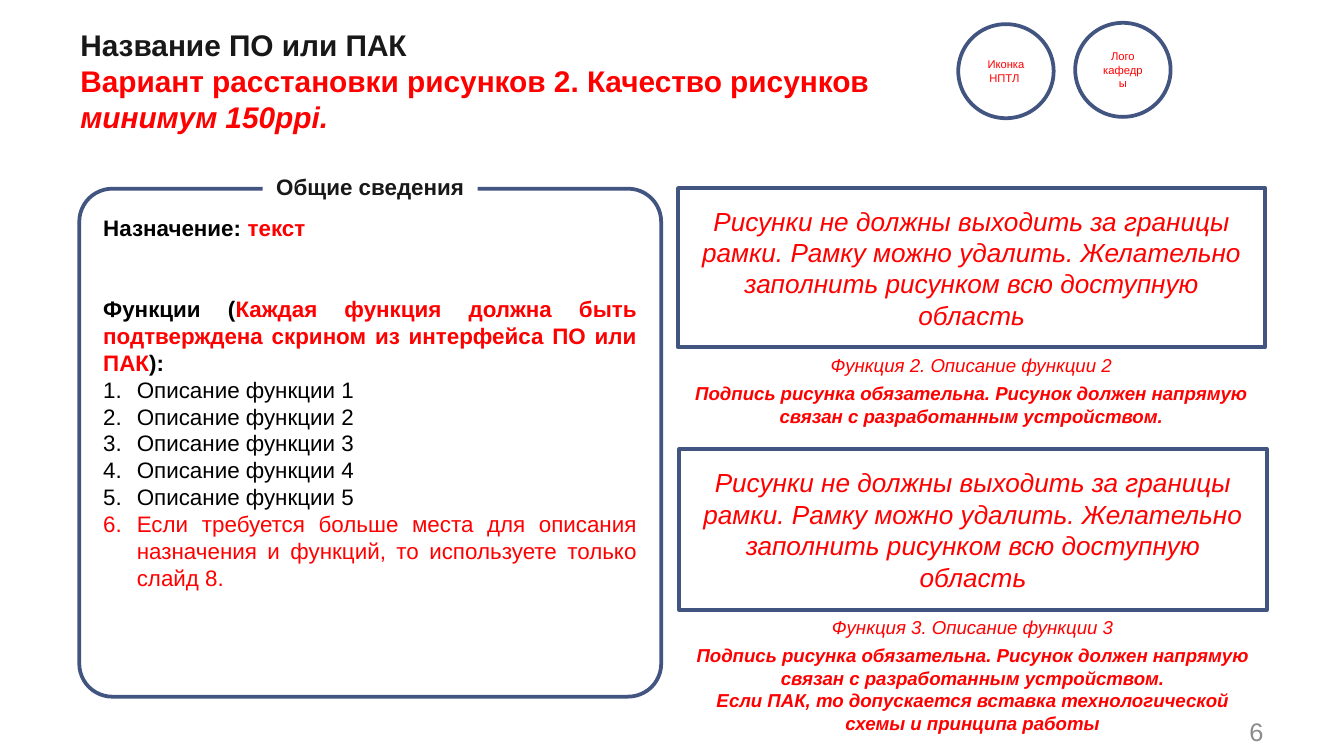
from lxml.etree import SubElement
from pptx import Presentation
from pptx.dml.color import RGBColor
from pptx.enum.shapes import MSO_SHAPE as Kind
from pptx.enum.text import MSO_ANCHOR as Anchor, MSO_AUTO_SIZE as Fit, PP_ALIGN as Align
from pptx.oxml.ns import qn
from pptx.util import Inches, Pt

RED, BLUE, WHITE, DARK, BLACK, GREY = "FF0000", "425480", "FFFFFF", "181818", "000000", "8C8C8C"
COLS, ROWS = 100, 56.25


def tint(code):
    return RGBColor.from_string(code)


class Deck:
    """Holds the style and the current slide, laid out on a grid of columns and rows."""

    def __init__(self):
        self.font = "Arial"
        self.show = Presentation()
        self.show.slide_width = Inches(10)
        self.show.slide_height = Inches(10) * 9 // 16
        self.slide = self.show.slides.add_slide(self.show.slide_layouts[6])

    def place(self, col, row, wide, high):
        x, y = self.show.slide_width / COLS, self.show.slide_height / ROWS
        return round(col * x), round(row * y), round(wide * x), round(high * y)

    def shape(self, kind, area, line=BLUE):
        item = self.slide.shapes.add_shape(kind, *self.place(*area))
        item.shadow.inherit = False
        item.fill.solid()
        item.fill.fore_color.rgb = tint(WHITE)
        if line:
            item.line.color.rgb = tint(line)
            item.line.width = Pt(2)
        else:
            item.line.fill.background()
        return item

    def box(self, area):
        return self.slide.shapes.add_textbox(*self.place(*area))

    def frame(self, item, anchor=Anchor.TOP, grow=False, wrap=True):
        text = item.text_frame
        text.word_wrap = wrap
        text.vertical_anchor = anchor
        text.auto_size = Fit.SHAPE_TO_FIT_TEXT if grow else Fit.NONE
        return text

    def para(self, text, runs, size, align=Align.LEFT, before=0, after=0, number=False):
        first = text.paragraphs[0]
        para = text.add_paragraph() if first.runs else first
        para.alignment = align
        para.space_before, para.space_after = Pt(before), Pt(after)
        if number:
            props = para._p.get_or_add_pPr()
            props.set("marL", str(Inches(0.25)))
            props.set("indent", str(-Inches(0.25)))
            SubElement(props, qn("a:buFont"), typeface="+mj-lt")
            SubElement(props, qn("a:buAutoNum"), type="arabicPeriod")
        for words, color, style in runs:
            run = para.add_run()
            run.text = words.rstrip("\n")
            font = run.font
            font.name, font.size = self.font, Pt(size)
            font.color.rgb = tint(color)
            font.bold, font.italic = "b" in style, "i" in style
            if words.endswith("\n"):
                para.add_line_break()

    def figure(self, area):
        text = self.frame(self.shape(Kind.RECTANGLE, area), Anchor.MIDDLE)
        words = ("Рисунки не должны выходить за границы рамки. Рамку можно удалить. "
                 "Желательно заполнить рисунком всю доступную область")
        self.para(text, [(words, RED, "i")], 14, Align.CENTER, after=3)

    def caption(self, area, num, *more):
        text = self.frame(self.box(area), grow=True)
        title = f"Функция {num}. Описание функции {num}"
        self.para(text, [(title, RED, "i")], 10, Align.CENTER, after=3)
        note = "Подпись рисунка обязательна. Рисунок должен напрямую связан с разработанным устройством."
        for words in (note, *more):
            self.para(text, [(words, RED, "bi")], 10, Align.CENTER)

    def badge(self, area, *lines):
        text = self.frame(self.shape(Kind.OVAL, area), Anchor.MIDDLE)
        for words in lines:
            self.para(text, [(words, RED, "")], 6, Align.CENTER)


def main():
    deck = Deck()

    panel = deck.shape(Kind.ROUNDED_RECTANGLE, (5.9, 14.04, 43.3, 37.8))
    panel.adjustments[0] = 0.065

    title = deck.frame(deck.box((5, 1.5, 67.7, 7)))
    deck.para(title, [("Название ПО или ПАК\n", DARK, "b"),
                      ("Вариант расстановки рисунков 2. Качество рисунков ", RED, "b"),
                      ("минимум 150ppi.", RED, "bi")], 16)

    page = deck.frame(deck.box((89.4, 52.9, 5.6, 3)), Anchor.MIDDLE)
    deck.para(page, [("6", GREY, "")], 13.6, Align.RIGHT)

    body = deck.frame(deck.box((6.7, 15.45, 41.7, 29.3)), grow=True)
    deck.para(body, [("Назначение: ", BLACK, "b"), ("текст", RED, "b")], 12, Align.JUSTIFY)
    need = "Каждая функция должна быть подтверждена скрином из интерфейса ПО или ПАК"
    deck.para(body, [("Функции (", BLACK, "b"), (need, RED, "b"), ("): ", BLACK, "b")],
              12, Align.JUSTIFY, before=29)
    items = [(f"Описание функции {num}", BLACK, "") for num in range(1, 6)]
    items.append(("Если требуется больше места для описания назначения и функций, "
                  "то используете только слайд 8.", RED, ""))
    for item in items:
        deck.para(body, [item], 12, Align.JUSTIFY, number=True)

    label = deck.shape(Kind.RECTANGLE, (19.55, 12.4, 16, 3), line=None)
    deck.para(deck.frame(label, grow=True, wrap=False), [("Общие сведения", DARK, "b")], 12, Align.CENTER)

    deck.figure((50.45, 14, 43.7, 11.85))
    deck.caption((50.6, 45.35, 43.5, 9.8), 3,
                 "Если ПАК, то допускается вставка технологической схемы и принципа работы")
    deck.figure((50.55, 33.4, 43.7, 12))
    deck.caption((50.5, 25.85, 43.5, 6.5), 2)

    deck.badge((80, 1.7, 7.1, 7), "Лого", "кафедры")
    deck.badge((71.3, 1.8, 7.1, 7), "Иконка НПТЛ ")
    deck.show.save("out.pptx")


if __name__ == "__main__":
    main()
